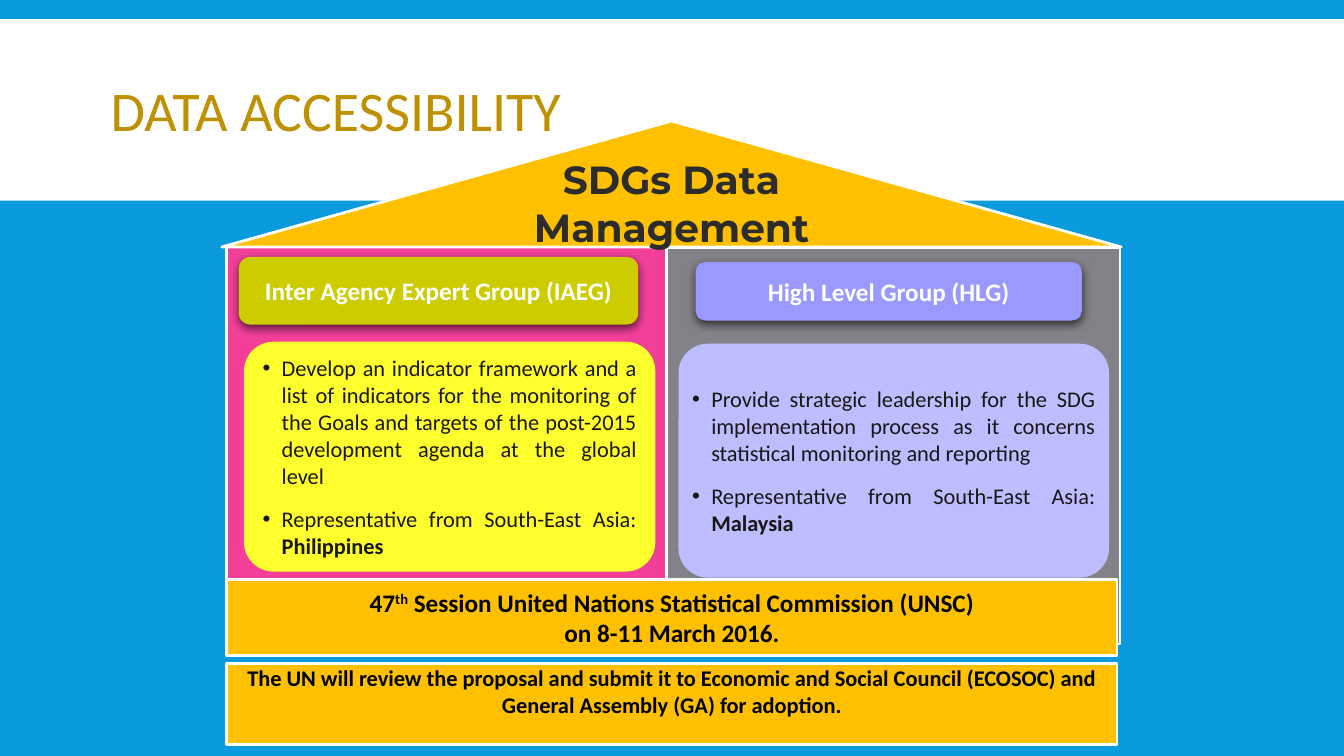
"""Build the data accessibility slide: a house of SDG data groups."""
from lxml import etree
from pptx import Presentation
from pptx.dml.color import RGBColor
from pptx.enum.shapes import MSO_SHAPE
from pptx.enum.text import MSO_ANCHOR, PP_ALIGN
from pptx.oxml.ns import qn
from pptx.util import Inches, Pt

RECT, ROUND = MSO_SHAPE.RECTANGLE, MSO_SHAPE.ROUNDED_RECTANGLE
ROOF = MSO_SHAPE.ISOSCELES_TRIANGLE
TOP, MIDDLE = MSO_ANCHOR.TOP, MSO_ANCHOR.MIDDLE
LEFT, CENTER, JUSTIFY = PP_ALIGN.LEFT, PP_ALIGN.CENTER, PP_ALIGN.JUSTIFY

BLUE, WHITE, BLACK, GOLD = "099BDD", "FFFFFF", "000000", "FFC000"
INSET = (0.1, 0.05, 0.1, 0.05)

TITLE = [[("DATA ACCESSIBILITY", "")]]
HEAD = [[("SDGs Data Management", "b")]]
WALLS = [
    ((2.25, 2.44, 4.42, 3.95), "F24099"),
    ((6.61, 2.46, 4.5, 3.93), "828288"),
]
CARDS = [
    ((6.73, 3.41, 4.27, 2.32), "BDBDFF", 0.125, (0.05,) * 4, [
        [("Provide strategic leadership for the SDG implementation process "
          "as it concerns statistical monitoring and reporting", "")],
        [("Representative from South-East Asia: ", ""), ("Malaysia", "b")]]),
    ((2.42, 3.39, 4.08, 2.28), "FFFF2D", 0.128, INSET, [
        [("Develop an indicator framework and a list of indicators for the "
          "monitoring of the Goals and targets of the post-2015 development "
          "agenda at the global level", "")],
        [("Representative from South-East Asia: ", ""), ("Philippines", "b")]]),
]
TAGS = [
    ((6.9, 2.6, 3.83, 0.58), "9999FF", "High Level Group (HLG)"),
    ((2.37, 2.55, 3.96, 0.67), "CCCC00", "Inter Agency Expert Group (IAEG)"),
]
BASES = [
    ((2.25, 5.75, 8.83, 0.75), 18, MIDDLE, (0, 0.05, 0, 0.05), [
        [("47", "b"), ("th", "b sup"),
         (" Session United Nations Statistical Commission (UNSC)", "b")],
        [("on 8-11 March 2016.", "b")]]),
    ((2.25, 6.58, 8.83, 0.81), 16, TOP, (0.04, 0.01, 0.04, 0.05), [
        [("The UN will review the proposal and submit it to Economic and "
          "Social Council (ECOSOC) and General Assembly (GA) for adoption.",
          "b")]]),
]


def color(code):
    return RGBColor.from_string(code)


def block(slide, kind, box, fill, edge=False, adj=None):
    shape = slide.shapes.add_shape(kind, *map(Inches, box))
    shape.shadow.inherit = False
    shape.fill.solid()
    shape.fill.fore_color.rgb = color(fill)
    if edge:
        shape.line.color.rgb = color(WHITE)
        shape.line.width = Pt(2)
    else:
        shape.line.fill.background()
    if adj:
        shape.adjustments[0] = adj
    return shape


def write(shape, paras, size, ink, align=CENTER, font="Calibri",
          anchor=MIDDLE, inset=INSET, space=None):
    frame = shape.text_frame
    frame.word_wrap = True
    frame.vertical_anchor = anchor
    (frame.margin_left, frame.margin_top,
     frame.margin_right, frame.margin_bottom) = map(Inches, inset)
    for i, runs in enumerate(paras):
        para = frame.add_paragraph() if i else frame.paragraphs[0]
        para.alignment = align
        if space:
            para.line_spacing = space
        for text, style in runs:
            run = para.add_run()
            run.text = text
            run.font.size = Pt(size)
            run.font.name = font
            run.font.bold = "b" in style.split()
            run.font.color.rgb = color(ink)
            if "sup" in style:
                run.font._element.set("baseline", "30000")


def bullet(shape):
    for i, para in enumerate(shape.text_frame.paragraphs):
        if i:
            para.space_before = Pt(12)
        props = para._p.get_or_add_pPr()
        props.set("marL", str(Inches(0.19)))
        props.set("indent", str(-Inches(0.19)))
        etree.SubElement(props, qn("a:buFont"), typeface="Arial")
        etree.SubElement(props, qn("a:buChar"), char="•")


def shade(shape):
    effects = shape._element.spPr.find(qn("a:effectLst"))
    outer = etree.SubElement(
        effects, qn("a:outerShdw"), blurRad=str(Pt(7)), dist=str(Pt(2.2)),
        dir="5400000", algn="ctr", rotWithShape="0")
    tint = etree.SubElement(outer, qn("a:srgbClr"), val=BLACK)
    etree.SubElement(tint, qn("a:alpha"), val="63000")


def main():
    deck = Presentation()
    deck.slide_width, deck.slide_height = Inches(13.33), Inches(7.5)
    slide = deck.slides.add_slide(deck.slide_layouts[6])
    slide.background.fill.solid()
    slide.background.fill.fore_color.rgb = color(BLUE)

    block(slide, RECT, (0, 0.19, 13.33, 1.8), WHITE)
    title = slide.shapes.add_textbox(*map(Inches, (1, 0.31, 11.33, 1.65)))
    write(title, TITLE, 40, "BF9000", LEFT, space=0.85)

    for box, fill in WALLS:
        block(slide, RECT, box, fill, True)
    roof = block(slide, ROOF, (2.2, 1.2, 8.92, 1.25), GOLD, True)
    write(roof, HEAD, 28, "2C2C2C", font="Montserrat",
          inset=(0.1, 0.05, 0.1, 0.3))

    for box, fill, adj, inset, paras in CARDS:
        card = block(slide, ROUND, box, fill, adj=adj)
        write(card, paras, 16, "181818", JUSTIFY, inset=inset)
        bullet(card)
    for box, fill, text in TAGS:
        tag = block(slide, ROUND, box, fill)
        write(tag, [[(text, "b")]], 18, WHITE)
        shade(tag)
    for box, size, anchor, inset, paras in BASES:
        base = block(slide, RECT, box, GOLD, True)
        write(base, paras, size, BLACK, anchor=anchor, inset=inset)

    deck.save("out.pptx")


if __name__ == "__main__":
    main()
